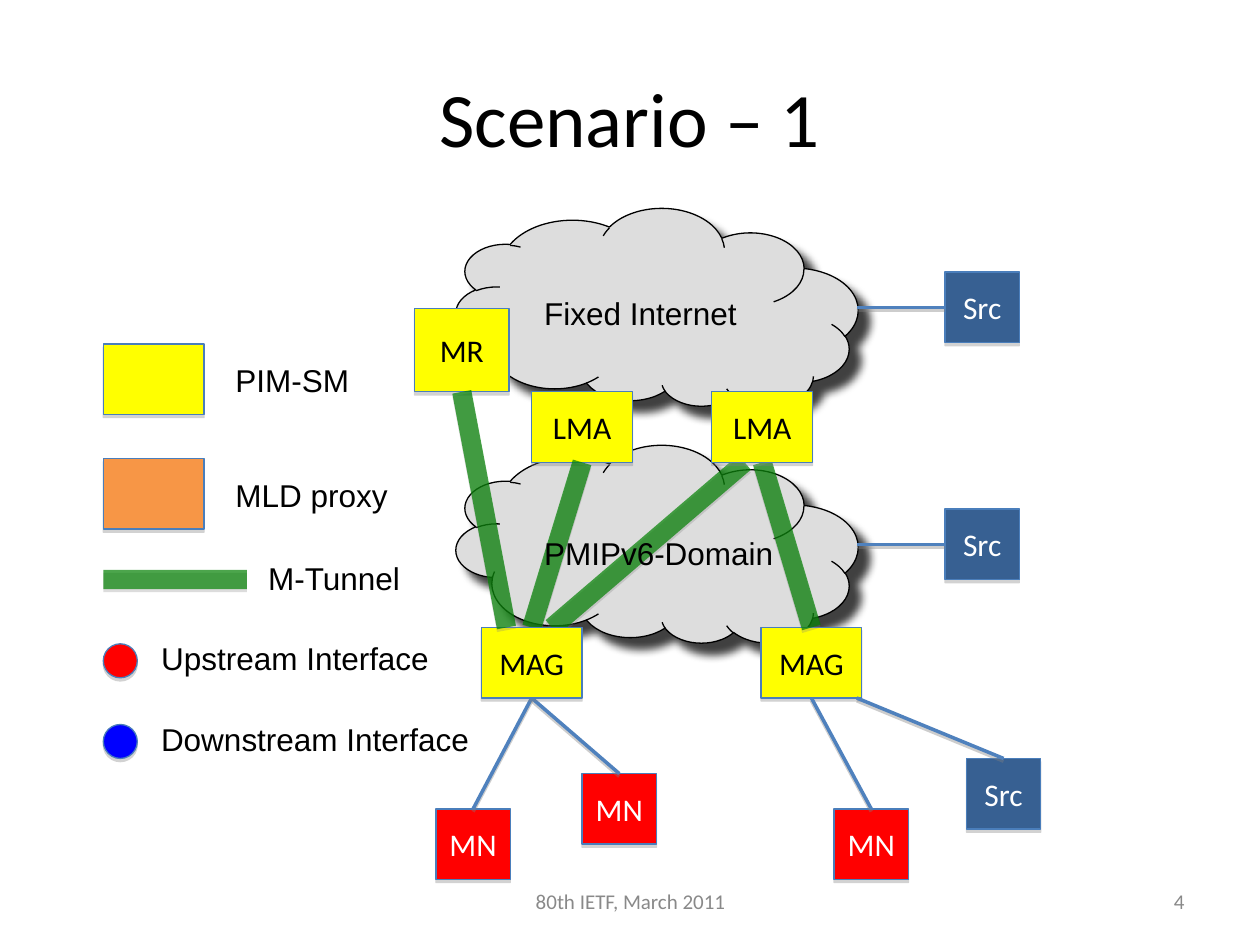
from lxml import etree
from pptx import Presentation, util as u
from pptx.dml.color import RGBColor
from pptx.enum import shapes, text
from pptx.oxml import ns

COLUMNS, ROWS = 100, 75
YELLOW, ORANGE, RED, BLUE = "FFFF00", "F79646", "FF0000", "0000FF"
NAVY, GREEN, STEEL, EDGE = "376092", "008000", "4F81BD", "4A7EBB"
BLACK, WHITE, GREY, CLOUD = "000000", "FFFFFF", "898989", "DDDDDD"
TOP, LEFT, BOTTOM = 0, 1, 2
SHAPE = shapes.MSO_SHAPE
ALIGN = text.PP_ALIGN


def color(hex_code):
    return RGBColor.from_string(hex_code)


def add_alpha(color_node, percent):
    etree.SubElement(color_node, ns.qn("a:alpha"), val=str(percent * 1000))


def add_shadow(shape, ink, percent, blur, distance, degrees):
    effects = etree.SubElement(shape._element.spPr, ns.qn("a:effectLst"))
    outer = etree.SubElement(
        effects, ns.qn("a:outerShdw"), blurRad=str(u.Pt(blur)),
        dist=str(u.Pt(distance)), dir=str(degrees * 60000), rotWithShape="0")
    add_alpha(etree.SubElement(outer, ns.qn("a:srgbClr"), val=ink), percent)


class Diagram:
    """Draws on one slide; lengths are columns and rows of a 100 by 75 grid."""

    def __init__(self, deck):
        self.slide = deck.slides.add_slide(deck.slide_layouts[5])
        self.column = deck.slide_width / COLUMNS
        self.row = deck.slide_height / ROWS

    def place(self, *lengths):
        """Turn alternating columns and rows into slide units."""
        return [round(length * unit) for length, unit
                in zip(lengths, (self.column, self.row) * 2)]

    def set_words(self, shape, words, size, font, ink, align):
        frame = shape.text_frame
        frame.text = words
        frame.vertical_anchor = text.MSO_ANCHOR.MIDDLE
        line = frame.paragraphs[0]
        line.alignment = align
        for run in line.runs:
            run.font.size = u.Pt(size)
            run.font.name = font
            run.font.color.rgb = color(ink)

    def title(self, words):
        heading = self.slide.shapes.title
        (heading.left, heading.top,
         heading.width, heading.height) = self.place(5, 3, 90, 12.5)
        self.set_words(heading, words, 44, "Calibri", BLACK, ALIGN.CENTER)

    def solid(self, kind, area, fill, edge):
        body = self.slide.shapes.add_shape(kind, *self.place(*area))
        body.fill.solid()
        body.fill.fore_color.rgb = color(fill)
        body.line.color.rgb = color(edge)
        body.line.width = u.Pt(0.75)
        return body

    def cloud(self, top):
        body = self.solid(SHAPE.CLOUD, (36.2, top, 31.9, 15.7), CLOUD, BLACK)
        body._element.spPr.xfrm.set("flipV", "1")
        add_shadow(body, BLACK, 75, 5, 8.5, 45)

    def node(self, left, top, width, height, fill, words="", ink=BLACK,
             kind=SHAPE.RECTANGLE):
        body = self.solid(kind, (left, top, width, height), fill, EDGE)
        add_shadow(body, "808080", 35, 0, 1.8, 90)
        if words:
            body.text_frame.word_wrap = False
            self.set_words(body, words, 18, "Calibri", ink, ALIGN.CENTER)
        return body

    def router(self, left, top, words=""):
        return self.node(left, top, 8, 5.6, YELLOW, words)

    def host(self, left, top, fill, words):
        return self.node(left, top, 5.9, 5.6, fill, words, WHITE)

    def label(self, left, top, width, words):
        box = self.slide.shapes.add_textbox(*self.place(left, top, width, 4))
        box.text_frame.word_wrap = False
        self.set_words(box, words, 18, "Arial", BLACK, ALIGN.LEFT)

    def footer(self, left, width, words, align):
        box = self.slide.shapes.add_textbox(
            *self.place(left, 69.5, width, 4))
        box.text_frame.word_wrap = True
        self.set_words(box, words, 12, "Calibri", GREY, align)

    def link(self, start, end, ink=STEEL, weight=2, behind=None):
        """Join two ends, each a (column, row) point or a (node, side) pair."""
        joined = [not isinstance(first, (int, float))
                  for first, _ in (start, end)]
        points = [(0, 0) if is_node else point
                  for is_node, point in zip(joined, (start, end))]
        wire = self.slide.shapes.add_connector(
            shapes.MSO_CONNECTOR.STRAIGHT,
            *self.place(*points[0], *points[1]))
        if joined[0]:
            wire.begin_connect(*start)
        if joined[1]:
            wire.end_connect(*end)
        wire.line.color.rgb = color(ink)
        wire.line.width = u.Pt(weight)
        add_shadow(wire, "808080", 38, 0, 1.6, 90)
        if behind is not None:
            behind._element.addprevious(wire._element)
        return wire

    def tunnel(self, start, end, behind=None):
        wire = self.link(start, end, GREEN, 11, behind)
        add_alpha(wire._element.spPr.find(".//" + ns.qn("a:srgbClr")), 70)


def draw_network(diagram):
    for top in (16.6, 35.4):
        diagram.cloud(top)
    for top in (21.6, 40.4):
        source = diagram.host(75, top, NAVY, "Src")
        diagram.link((source, LEFT), (68, top + 2.8))

    left_lma = diagram.router(42.2, 31.1, "LMA")
    right_mag = diagram.router(60.4, 49.8, "MAG")
    near_mn, left_mn, right_mn = [
        diagram.host(left, top, RED, "MN")
        for left, top in ((46.2, 61.4), (34.6, 64.2), (66.2, 64.2))]
    mobile_source = diagram.host(76.7, 60.2, NAVY, "Src")
    right_lma = diagram.router(56.5, 31.1, "LMA")
    left_mag = diagram.router(38.2, 49.8, "MAG")

    diagram.tunnel((left_lma, BOTTOM), (left_mag, TOP), right_lma)
    diagram.tunnel((right_lma, BOTTOM), (right_mag, TOP), right_lma)
    diagram.tunnel((59.1, 36.7), (43.8, 49.8), right_lma)
    for mag, mobile in ((left_mag, left_mn), (left_mag, near_mn),
                        (right_mag, right_mn)):
        diagram.link((mag, BOTTOM), (mobile, TOP), behind=right_lma)
    diagram.link((mobile_source, TOP), (68, 55.4))

    diagram.label(42.2, 22.8, 17.3, "Fixed Internet")
    diagram.label(42.2, 41.9, 20.4, "PMIPv6-Domain")
    mr = diagram.node(32.9, 24.5, 7.5, 6.6, YELLOW, "MR")
    diagram.tunnel((mr, BOTTOM), (40.2, 49.8))


def draw_legend(diagram):
    edge = 8.2
    for top, fill, width, words in ((27.3, YELLOW, 11.1, "PIM-SM"),
                                    (36.4, ORANGE, 14.2, "MLD proxy")):
        diagram.node(edge, top, 8, 5.6, fill)
        diagram.label(17.7, top + 0.85, width, words)
    diagram.tunnel((19.6, 46), (edge, 46))
    diagram.label(20.3, 43.9, 12.6, "M-Tunnel")
    for top, fill, width, words in ((51.1, RED, 23.5, "Upstream Interface"),
                                    (57.5, BLUE, 26.7, "Downstream Interface")):
        diagram.node(edge, top, 2.7, 2.7, fill, kind=SHAPE.OVAL)
        diagram.label(11.8, top - 0.85, width, words)


def main():
    deck = Presentation()
    deck.slide_width, deck.slide_height = u.Inches(10), u.Inches(7.5)
    diagram = Diagram(deck)
    diagram.title("Scenario – 1")
    draw_network(diagram)
    draw_legend(diagram)
    diagram.footer(34.2, 31.7, "80th IETF, March 2011", ALIGN.CENTER)
    diagram.footer(71.7, 23.3, "4", ALIGN.RIGHT)
    deck.save("out.pptx")


if __name__ == "__main__":
    main()
